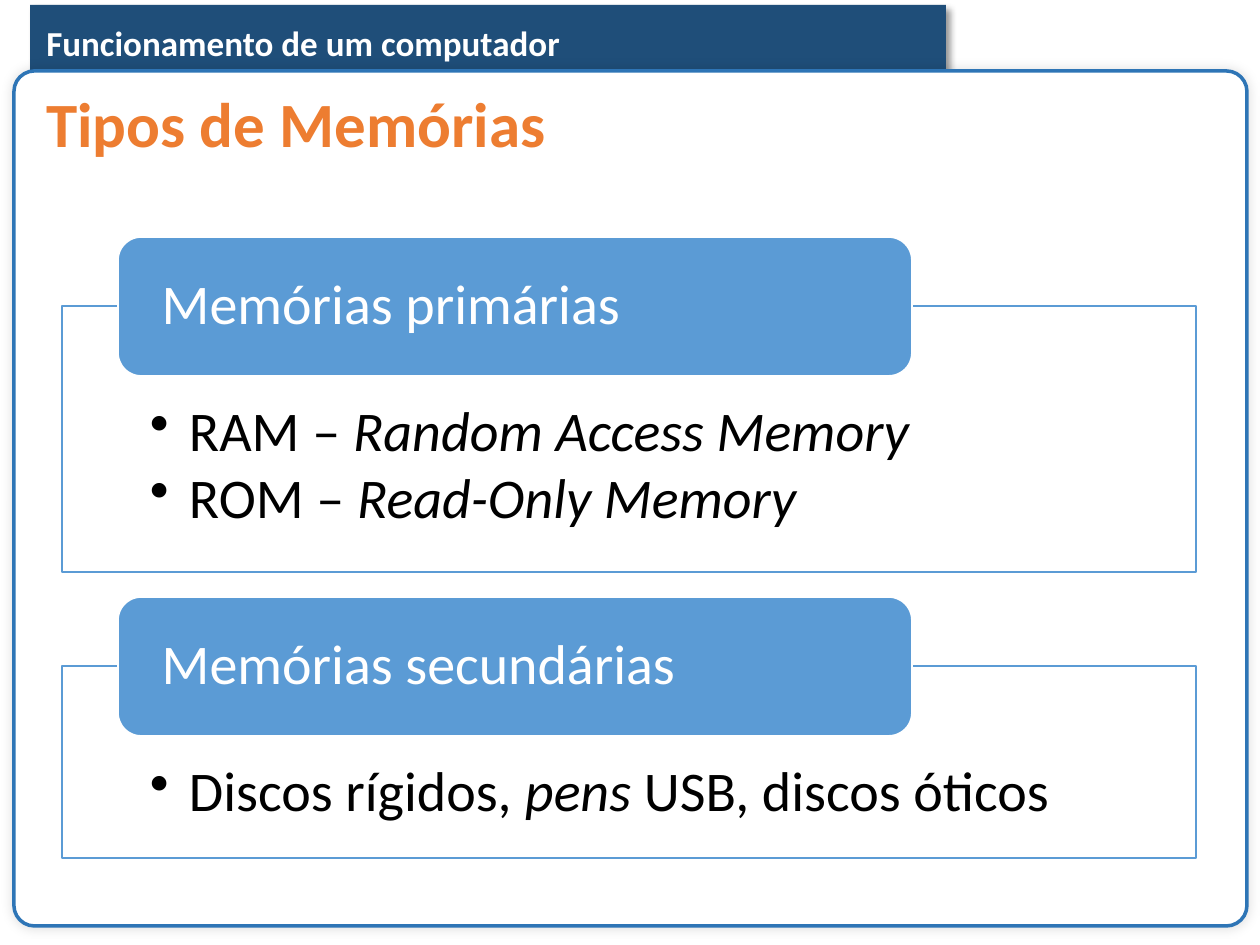
from dataclasses import dataclass

import lxml.etree
import pptx
import pptx.dml.color
import pptx.enum.shapes
import pptx.enum.text
import pptx.oxml
import pptx.oxml.ns
import pptx.util

EMU_PER_PX = 914400 / 126
FONT = "Calibri"
COLORS = {
    "banner": "1F4E79",
    "frame": "2E75B6",
    "accent": "5B9BD5",
    "title": "ED7D31",
    "white": "FFFFFF",
    "black": "000000",
}
SHAPES = pptx.enum.shapes.MSO_SHAPE
ANCHORS = pptx.enum.text.MSO_ANCHOR


@dataclass
class Area:
    left: int
    top: int
    width: int
    height: int


@dataclass
class Shadow:
    alpha: int
    blur: int
    distance: int
    angle: int


@dataclass
class Span:
    text: str
    italic: bool = False


@dataclass
class MemoryGroup:
    heading: str
    top: int
    height: int
    items: list[list[Span]]


GROUPS = [
    MemoryGroup("Memórias primárias", 306, 266, [
        [Span("RAM – "), Span("Random Access Memory", True)],
        [Span("ROM – "), Span("Read-Only Memory", True)],
    ]),
    MemoryGroup("Memórias secundárias", 666, 192, [
        [Span("Discos rígidos, "), Span("pens", True), Span(" USB, discos óticos")],
    ]),
]


def px(length: int) -> int:
    return round(length * EMU_PER_PX)


def color(name: str) -> pptx.dml.color.RGBColor:
    return pptx.dml.color.RGBColor.from_string(COLORS[name])


def bounds(area: Area) -> list[int]:
    return [px(n) for n in (area.left, area.top, area.width, area.height)]


def add_box(page, kind, area: Area, fill: str, line: str = "", width: int = 1):
    box = page.shapes.add_shape(kind, *bounds(area))
    box.shadow.inherit = False
    box.fill.solid()
    box.fill.fore_color.rgb = color(fill)
    if line:
        box.line.color.rgb = color(line)
        box.line.width = pptx.util.Pt(width)
    else:
        box.line.fill.background()
    return box


def cast_shadow(box, shadow: Shadow) -> None:
    effects = box.element.spPr.find(pptx.oxml.ns.qn("a:effectLst"))
    effects.append(pptx.oxml.parse_xml(
        f'<a:outerShdw {pptx.oxml.ns.nsdecls("a")} blurRad="{shadow.blur * 12700}" '
        f'dist="{shadow.distance * 12700}" dir="{shadow.angle * 60000}" '
        f'algn="ctr" rotWithShape="0"><a:srgbClr val="{COLORS["black"]}">'
        f'<a:alpha val="{shadow.alpha * 1000}"/></a:srgbClr></a:outerShdw>'
    ))


def set_insets(frame, left: int, top: int, right: int, bottom: int) -> None:
    frame.word_wrap = True
    frame.margin_left, frame.margin_top = px(left), px(top)
    frame.margin_right, frame.margin_bottom = px(right), px(bottom)


def style_span(span, size: int, shade: str, bold: bool = False, italic: bool = False) -> None:
    span.font.name = FONT
    span.font.size = pptx.util.Pt(size)
    span.font.color.rgb = color(shade)
    span.font.bold = bold
    span.font.italic = italic


def write_line(frame, text: str, size: int, shade: str, spacing, bold: bool = False) -> None:
    frame.text = text
    para = frame.paragraphs[0]
    para.alignment = pptx.enum.text.PP_ALIGN.LEFT
    para.line_spacing = spacing
    style_span(para.runs[0], size, shade, bold)


def add_label(page, area: Area, text: str, size: int, shade: str, spacing):
    box = page.shapes.add_textbox(*bounds(area))
    box.text_frame.word_wrap = True
    write_line(box.text_frame, text, size, shade, spacing, bold=True)
    return box


def write_bullet(para, spans: list[Span]) -> None:
    properties = para._p.get_or_add_pPr()
    properties.set("marL", str(px(39)))
    properties.set("indent", str(px(-39)))
    bullet = lxml.etree.SubElement(properties, pptx.oxml.ns.qn("a:buChar"))
    bullet.set("char", "•")
    para.alignment = pptx.enum.text.PP_ALIGN.LEFT
    para.line_spacing = 0.9
    para.space_after = pptx.util.Pt(4)
    for part in spans:
        span = para.add_run()
        span.text = part.text
        style_span(span, 32, "black", italic=part.italic)


def add_group(page, group: MemoryGroup) -> None:
    panel = add_box(page, SHAPES.RECTANGLE, Area(62, group.top, 1134, group.height),
                    "white", "accent")
    fill_color = panel.element.spPr.find(".//" + pptx.oxml.ns.qn("a:srgbClr"))
    alpha = lxml.etree.SubElement(fill_color, pptx.oxml.ns.qn("a:alpha"))
    alpha.set("val", "90000")
    frame = panel.text_frame
    set_insets(frame, 88, 97, 88, 32)
    frame.vertical_anchor = ANCHORS.TOP
    for index, spans in enumerate(group.items):
        write_bullet(frame.add_paragraph() if index else frame.paragraphs[0], spans)

    tab = add_box(page, SHAPES.ROUNDED_RECTANGLE, Area(118, group.top - 69, 794, 139),
                  "accent", "white")
    set_insets(tab.text_frame, 37, 0, 37, 0)
    tab.text_frame.vertical_anchor = ANCHORS.MIDDLE
    write_line(tab.text_frame, group.heading, 32, "white", 0.9)


def main() -> None:
    deck = pptx.Presentation()
    deck.slide_width, deck.slide_height = px(1260), px(945)
    page = deck.slides.add_slide(deck.slide_layouts[6])

    banner = add_box(page, SHAPES.RECTANGLE, Area(30, 5, 916, 78), "banner")
    cast_shadow(banner, Shadow(40, 4, 3, 45))
    add_label(page, Area(34, 8, 945, 59), "Funcionamento de um computador",
              20, "white", pptx.util.Pt(28))

    body = add_box(page, SHAPES.ROUNDED_RECTANGLE, Area(14, 71, 1233, 855),
                   "white", "frame", 2)
    body.adjustments[0] = 0.024
    cast_shadow(body, Shadow(13, 6, 0, 0))

    for group in GROUPS:
        add_group(page, group)
    add_label(page, Area(34, 87, 1159, 83), "Tipos de Memórias", 36, "title", 0.9)
    deck.save("out.pptx")


if __name__ == "__main__":
    main()
